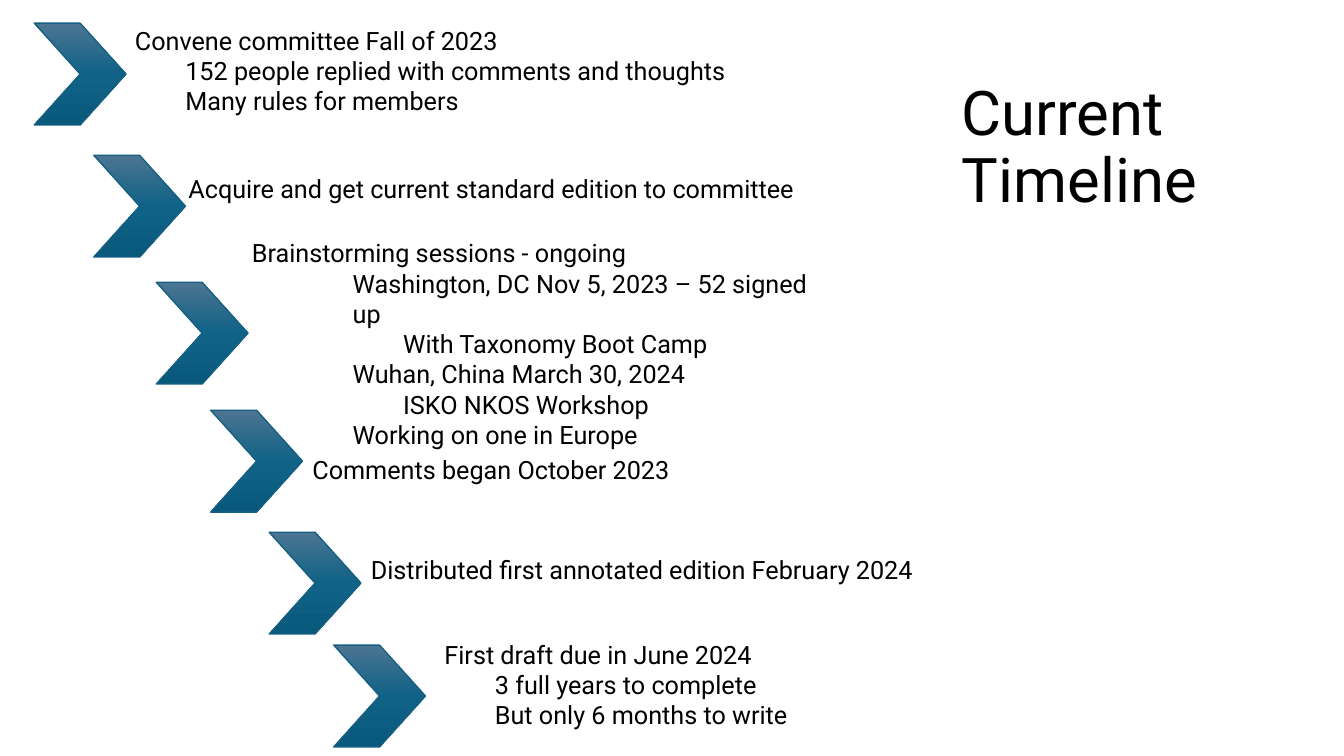
"""Build a timeline slide with six descending chevrons and their notes."""
from copy import deepcopy

from pptx import Presentation
from pptx.dml.color import RGBColor
from pptx.enum.shapes import MSO_SHAPE
from pptx.enum.text import MSO_ANCHOR
from pptx.util import Inches, Pt

COLUMNS, ROWS = 13.33, 7.5
CHEVRON_WIDTH, CHEVRON_HEIGHT = 0.91, 1.01
GRADIENT = [(0, "4C7591"), (0.5, "106287"), (1, "09597D")]

presentation = Presentation()
presentation.slide_width = Inches(COLUMNS)
presentation.slide_height = Inches(ROWS)
column = presentation.slide_width / COLUMNS
row = presentation.slide_height / ROWS
slide = presentation.slides.add_slide(presentation.slide_layouts[6])


def color(code):
    return RGBColor.from_string(code)


def add_text(left, top, width, height, lines, size):
    box = slide.shapes.add_textbox(
        int(left * column), int(top * row), int(width * column), int(height * row))
    frame = box.text_frame
    frame.word_wrap = True
    frame.text = "\n".join(text for level, text in lines)
    for paragraph, (level, text) in zip(frame.paragraphs, lines):
        paragraph.level = level
        for run in paragraph.runs:
            run.font.name = "Roboto"
            run.font.size = Pt(size)
            run.font.color.rgb = color("000000")
    return frame


title = add_text(9.44, 0.75, 3.32, 1.46, [(0, "Current\vTimeline")], 44)
title.vertical_anchor = MSO_ANCHOR.MIDDLE
title.paragraphs[0].line_spacing = 0.9

steps = [
    ((0.34, 0.23), (1.24, 0.2, 6.13, 1.31), [
        (0, "Convene committee Fall of 2023"),
        (1, "152 people replied with comments and thoughts"),
        (1, "Many rules for members")]),
    ((0.93, 1.54), (1.77, 1.67, 6.25, 0.71), [
        (0, "Acquire and get current standard edition to committee")]),
    ((1.55, 2.8), (2.4, 2.31, 5.89, 2.22), [
        (0, "Brainstorming sessions - ongoing"),
        (2, "Washington, DC Nov 5, 2023 – 52 signed up"),
        (3, "With Taxonomy Boot Camp"),
        (2, "Wuhan, China March 30, 2024"),
        (3, "ISKO NKOS Workshop"),
        (2, "Working on one in Europe")]),
    ((2.09, 4.07), (3, 4.46, 3.79, 0.4), [
        (0, "Comments began October 2023")]),
    ((2.67, 5.28), (3.58, 5.45, 5.6, 0.4), [
        (0, "Distributed first annotated edition February 2024")]),
    ((3.31, 6.4), (4.31, 6.29, 3.61, 1.31), [
        (0, "First draft due in June 2024"),
        (1, "3 full years to complete"),
        (1, "But only 6 months to write")]),
]

for (left, top), text_area, lines in steps:
    chevron = slide.shapes.add_shape(
        MSO_SHAPE.CHEVRON, int(left * column), int(top * row),
        int(CHEVRON_WIDTH * column), int(CHEVRON_HEIGHT * row))
    chevron.shadow.inherit = False
    chevron.line.color.rgb = color("156082")
    chevron.line.width = Pt(1)
    chevron.fill.gradient()
    chevron.fill.gradient_angle = 270
    first_stop = chevron._element.xpath(".//a:gs")[0]
    first_stop.addnext(deepcopy(first_stop))
    for stop, (position, code) in zip(chevron.fill.gradient_stops, GRADIENT):
        stop.position = position
        stop.color.rgb = color(code)
    add_text(*text_area, lines, 18)

presentation.save("out.pptx")
